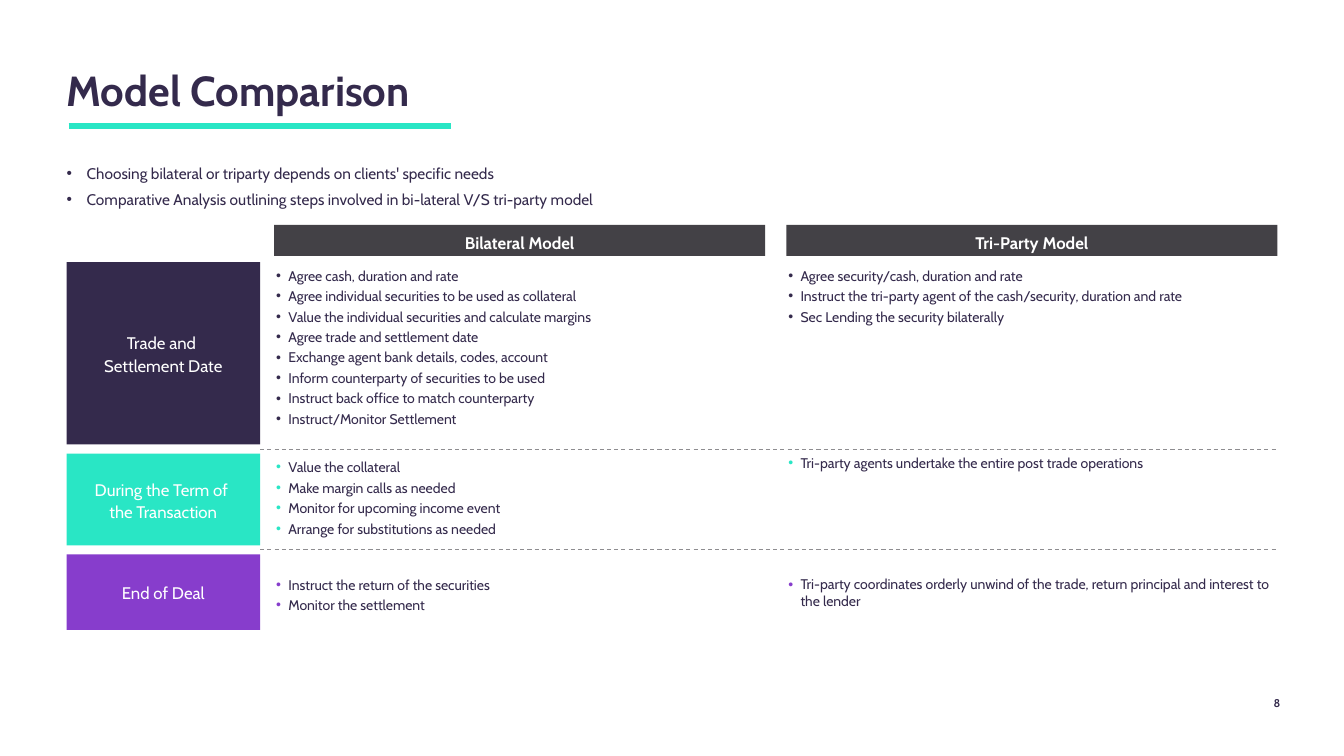
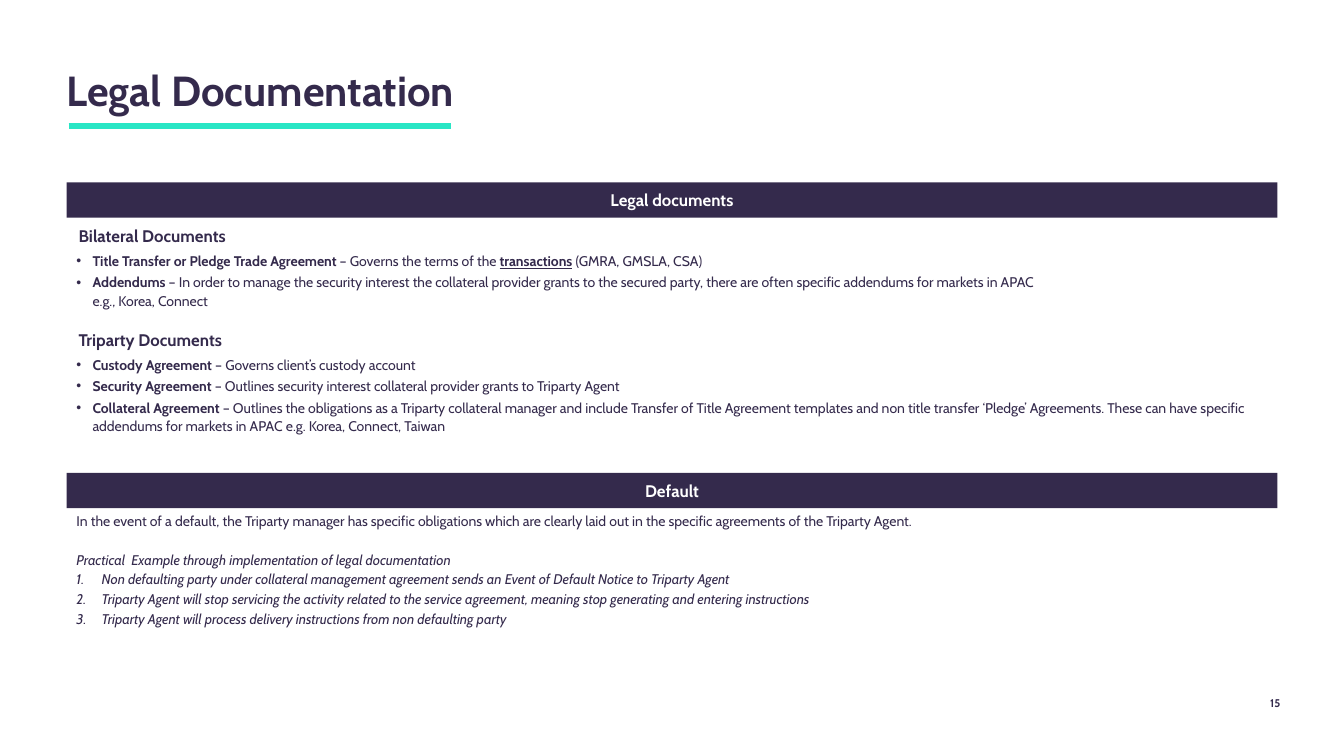
from dataclasses import dataclass, replace
from itertools import pairwise

from lxml.etree import SubElement
from pptx import Presentation
from pptx.dml.color import RGBColor
from pptx.enum.dml import MSO_LINE
from pptx.enum.shapes import MSO_CONNECTOR, MSO_SHAPE
from pptx.enum.text import MSO_ANCHOR as Anchor, MSO_AUTO_SIZE as AutoSize, PP_ALIGN as Align
from pptx.oxml.ns import qn
from pptx.util import Inches, Pt


@dataclass(frozen=True)
class Theme:
    font: str = "Cabin"
    bullet_font: str = "Arial"
    ink: str = "342A4C"
    mint: str = "29E6C5"
    purple: str = "873DCC"
    charcoal: str = "434146"
    rule: str = "8E8D90"
    white: str = "FFFFFF"
    title: int = 30
    heading: int = 12
    intro: int = 11
    body: int = 10
    number: int = 8


THEME = Theme()
LEFT, WIDTH = 0.66, 12.01
RIGHT = LEFT + WIDTH


@dataclass(frozen=True)
class Style:
    size: int = THEME.body
    color: str = THEME.ink
    bold: bool = False
    italic: bool = False
    align: Align = Align.LEFT
    line: object = None
    before: float = 0
    after: float = 0
    bullet: str = ""  # a character, or "1." for automatic numbers
    bullet_color: str = THEME.ink
    indent: float = 0
    hang: float = 0


TITLE = Style(THEME.title, bold=True)
NUMBER = Style(THEME.number, bold=True, align=Align.RIGHT, line=Pt(12))
HEADING = Style(THEME.heading, bold=True)
BAND = replace(HEADING, color=THEME.white, align=Align.CENTER)
LABEL = replace(BAND, bold=False, line=1.1, after=1)
INTRO = Style(THEME.intro, line=1.1, before=2, after=2, bullet="•", indent=0.2, hang=0.2)
STEP = Style(before=2.6, bullet="•", indent=0.14, hang=0.12)
DOCUMENT = Style(line=1.1, before=1, after=1, bullet="•", indent=0.16, hang=0.16)
EXAMPLE = Style(italic=True, before=16)
NUMBERED = Style(italic=True, before=2, bullet="1.", indent=0.25, hang=0.25)


def rgb(code):
    return RGBColor.from_string(code)


def add_bullet(para, style):
    props = para._p.get_or_add_pPr()
    props.set("marL", str(Inches(style.indent)))
    props.set("indent", str(-Inches(style.hang)))
    color = SubElement(props, qn("a:buClr"))
    SubElement(color, qn("a:srgbClr"), val=style.bullet_color)
    if style.bullet == "1.":
        SubElement(props, qn("a:buAutoNum"), type="arabicPeriod")
    else:
        SubElement(props, qn("a:buFont"), typeface=THEME.bullet_font)
        SubElement(props, qn("a:buChar"), char=style.bullet)


def add_spans(para, spans):
    """Add (text, marks) pairs; marks may hold b for bold and u for underline."""
    for text, marks in spans:
        for index, part in enumerate(text.split("\n")):
            if index:
                para.add_line_break()
            span = para.add_run()
            span.text = part
            if "b" in marks:
                span.font.bold = True
            if "u" in marks:
                span.font.underline = True


def format_para(para, style, first):
    if style.bullet:
        add_bullet(para, style)
    para.alignment = style.align
    para.space_before = Pt(0 if first else style.before)
    para.space_after = Pt(style.after)
    if style.line:
        para.line_spacing = style.line
    font = para.font
    font.name, font.size = THEME.font, Pt(style.size)
    font.bold, font.italic = style.bold, style.italic
    font.color.rgb = rgb(style.color)


def write(shape, paras, insets=(0, 0, 0, 0), anchor=Anchor.TOP):
    """Fill a shape with (content, style) pairs; content is text or a list of spans."""
    frame = shape.text_frame
    frame.word_wrap = True
    frame.auto_size = AutoSize.NONE
    frame.vertical_anchor = anchor
    (frame.margin_left, frame.margin_top,
     frame.margin_right, frame.margin_bottom) = map(Inches, insets)
    for index, (content, style) in enumerate(paras):
        para = frame.add_paragraph() if index else frame.paragraphs[0]
        format_para(para, style, first=not index)
        add_spans(para, [(content, "")] if isinstance(content, str) else content)


def styled(items, style):
    return [(item, style) for item in items]


def add_text(page, place, paras, insets=(0, 0, 0, 0), anchor=Anchor.TOP):
    write(page.shapes.add_textbox(*map(Inches, place)), paras, insets, anchor)


def add_block(page, place, fill, text, style, insets=(0, 0, 0, 0)):
    block = page.shapes.add_shape(MSO_SHAPE.RECTANGLE, *map(Inches, place))
    block.shadow.inherit = False
    block.fill.solid()
    block.fill.fore_color.rgb = rgb(fill)
    block.line.fill.background()
    write(block, [(text, style)], insets, Anchor.MIDDLE)


def add_rule(page, start, end, y, color, weight, dash=None):
    rule = page.shapes.add_connector(
        MSO_CONNECTOR.STRAIGHT, *map(Inches, (start, y, end, y)))
    rule.line.color.rgb = rgb(color)
    rule.line.width = Pt(weight)
    if dash:
        rule.line.dash_style = dash
    SubElement(rule._element.spPr, qn("a:effectLst"))


def add_page(deck, title, number):
    page = deck.slides.add_slide(deck.slide_layouts.get_by_name("Title Only"))
    heading = page.shapes.title
    heading.left, heading.top, heading.width, heading.height = map(
        Inches, (LEFT, 0.57, 6.47, 0.65))
    write(heading, [(title, TITLE)], (0, 0.05, 0, 0.05), Anchor.MIDDLE)
    add_rule(page, 0.68, 4.47, 1.25, THEME.mint, 4)
    add_text(page, (10.9, 6.83, 1.8, 0.21), [(number, NUMBER)], (0, 0.05, 0, 0.05))
    return page


INTRO_LINES = [
    "Choosing bilateral or triparty depends on clients' specific needs",
    "Comparative Analysis outlining steps involved in bi-lateral V/S tri-party model",
]


@dataclass(frozen=True)
class Stage:
    label: str
    color: str
    height: float
    bilateral: list
    triparty: list
    anchor: Anchor = Anchor.TOP
    triparty_inset: float = 0.01


STAGES = [
    Stage("Trade and \nSettlement Date", THEME.ink, 1.81, [
        "Agree cash, duration and rate",
        "Agree individual securities to be used as collateral",
        "Value the individual securities and calculate margins",
        "Agree trade and settlement date",
        "Exchange agent bank details, codes, account",
        "Inform counterparty of securities to be used",
        "Instruct back office to match counterparty",
        "Instruct/Monitor Settlement",
    ], [
        "Agree security/cash, duration and rate",
        "Instruct the tri-party agent of the cash/security, duration and rate",
        "Sec Lending the security bilaterally",
    ], triparty_inset=0.05),
    Stage("During the Term of \nthe Transaction", THEME.mint, 0.91, [
        "Value the collateral",
        "Make margin calls as needed",
        "Monitor for upcoming income event",
        "Arrange for substitutions as needed",
    ], ["Tri-party agents undertake the entire post trade operations"]),
    Stage("End of Deal", THEME.purple, 0.75, [
        "Instruct the return of the securities",
        "Monitor the settlement",
    ], ["Tri-party coordinates orderly unwind of the trade, "
        "return principal and interest to the lender"], Anchor.MIDDLE),
]


def build_comparison(deck):
    page = add_page(deck, "Model Comparison", "8")
    add_text(page, (LEFT, 1.61, WIDTH, 0.45), styled(INTRO_LINES, INTRO))

    label_width, column_width, row_gap = 1.92, 4.87, 0.09
    columns = (2.72, RIGHT - column_width)
    for left, name in zip(columns, ("Bilateral Model", "Tri-Party Model")):
        add_block(page, (left, 2.23, column_width, 0.31), THEME.charcoal, name, BAND,
                  (0, 0.05, 0, 0))

    tops = [2.6]
    for stage in STAGES:
        top = tops[-1]
        add_block(page, (LEFT, top, label_width, stage.height), stage.color,
                  stage.label, LABEL, (0.02,) * 4)
        step = replace(STEP, bullet_color=stage.color)
        cells = ((stage.bilateral, 0.05), (stage.triparty, stage.triparty_inset))
        for left, (steps, inset) in zip(columns, cells):
            add_text(page, (left, top, column_width, stage.height),
                     styled(steps, step), (0, inset, 0, 0), stage.anchor)
        tops.append(top + stage.height + row_gap)
    for _, next_top in pairwise(tops[:-1]):
        add_rule(page, LEFT + label_width, RIGHT, next_top - row_gap / 2,
                 THEME.rule, 0.75, MSO_LINE.DASH)


# Heading, top and height of the list, documents
DOCUMENT_GROUPS = [
    ("Bilateral Documents", 2.49, 0.57, [
        [("Title Transfer or Pledge Trade Agreement ", "b"),
         ("– Governs the terms of the ", ""), ("transactions", "bu"),
         (" (GMRA, GMSLA, CSA)", "")],
        [("Addendums ", "b"),
         ("– In order to manage the security interest the collateral provider grants to the "
          "secured party, there are often specific addendums for markets in APAC \n"
          "e.g., Korea, Connect", "")],
    ]),
    ("Triparty Documents", 3.52, 0.79, [
        [("Custody Agreement ", "b"), ("– Governs client’s custody account", "")],
        [("Security Agreement ", "b"),
         ("– Outlines security interest collateral provider grants to Triparty Agent", "")],
        [("Collateral Agreement", "b"),
         (" – Outlines the obligations as a Triparty collateral manager and include Transfer "
          "of Title Agreement templates and non title transfer ‘Pledge’ Agreements. These can "
          "have specific addendums for markets in APAC e.g. Korea, Connect, Taiwan", "")],
    ]),
]

DEFAULT_TEXT = ("In the event of a default, the Triparty manager has specific obligations which "
                "are clearly laid out in the specific agreements of the Triparty Agent.")
EXAMPLE_TITLE = "Practical  Example through implementation of legal documentation"
EXAMPLE_STEPS = [
    "Non defaulting party under collateral management agreement sends an Event of Default "
    "Notice to Triparty Agent",
    "Triparty Agent will stop servicing the activity related to the service agreement, "
    "meaning stop generating and entering instructions",
    "Triparty Agent will process delivery instructions from non defaulting party",
]


def build_documentation(deck):
    page = add_page(deck, "Legal Documentation", "15")
    sides = (0.1, 0, 0.1, 0)
    for top, name in ((1.81, "Legal documents"), (4.69, "Default")):
        add_block(page, (LEFT, top, WIDTH, 0.35), THEME.ink, name, BAND)
    for name, top, height, documents in DOCUMENT_GROUPS:
        add_text(page, (LEFT, top - 0.25, 3, 0.2), [(name, HEADING)], (0.12, 0, 0, 0))
        add_text(page, (LEFT, top, WIDTH, height), styled(documents, DOCUMENT), sides)
    add_text(page, (LEFT, 5.08, WIDTH, 1.18),
             [(DEFAULT_TEXT, Style()), (EXAMPLE_TITLE, EXAMPLE),
              *styled(EXAMPLE_STEPS, NUMBERED)], sides)


def main():
    deck = Presentation()
    deck.slide_width, deck.slide_height = Inches(13.33), Inches(7.5)
    build_comparison(deck)
    build_documentation(deck)
    deck.save("out.pptx")


if __name__ == "__main__":
    main()
